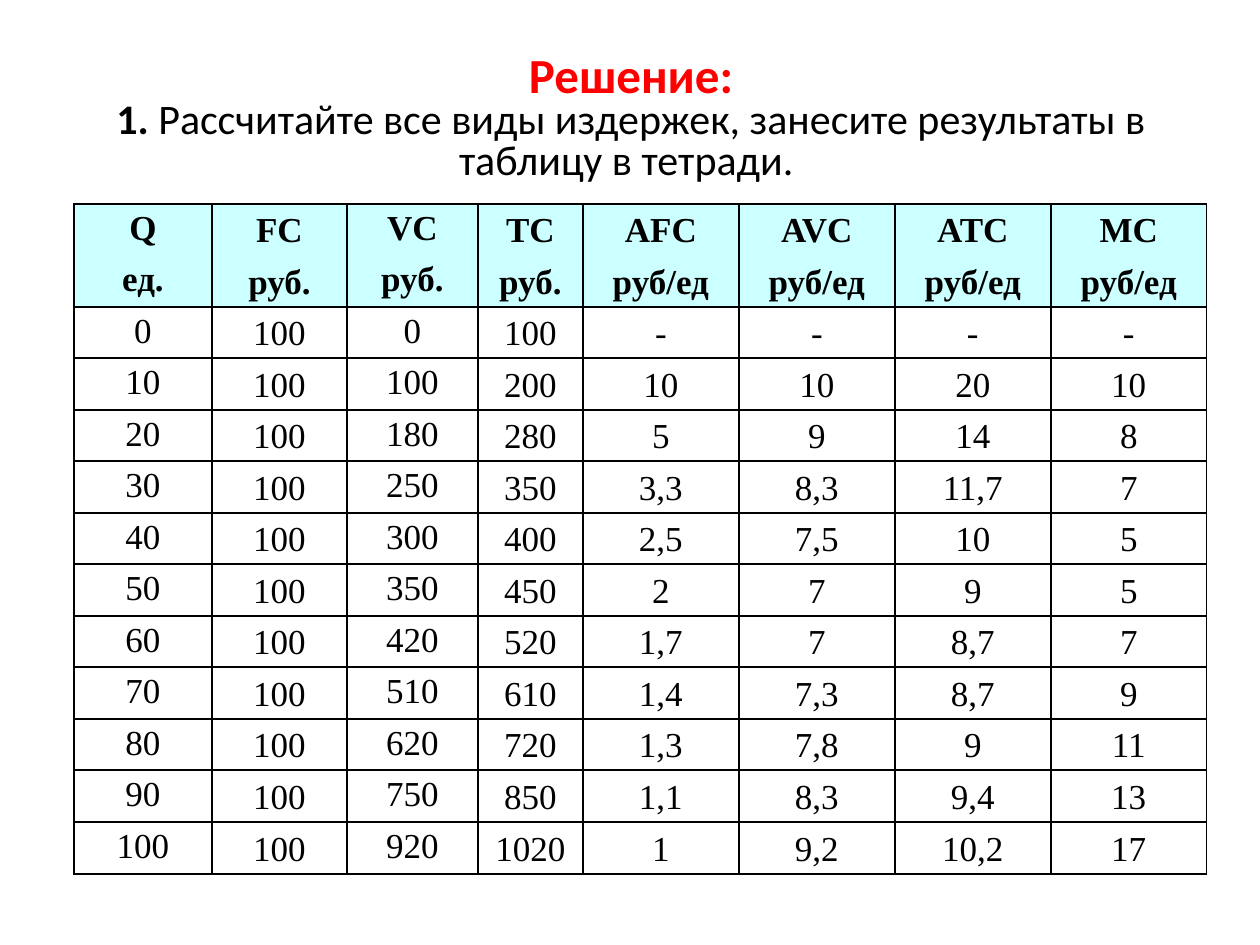
from lxml.etree import SubElement
from pptx import Presentation
from pptx.dml.color import RGBColor
from pptx.enum.text import MSO_ANCHOR, MSO_AUTO_SIZE, PP_ALIGN
from pptx.oxml.ns import qn
from pptx.util import Emu, Pt

PX = 914400 // 126
BLACK = RGBColor(0x00, 0x00, 0x00)
RED = RGBColor(0xFF, 0x00, 0x00)
WHITE = RGBColor(0xFF, 0xFF, 0xFF)
PALE_CYAN = RGBColor(0xCC, 0xFF, 0xFF)
CENTER = PP_ALIGN.CENTER
TOP, MIDDLE, BOTTOM = MSO_ANCHOR.TOP, MSO_ANCHOR.MIDDLE, MSO_ANCHOR.BOTTOM
NO_AUTOFIT = MSO_AUTO_SIZE.NONE

TITLE_BOX = (64, 45, 1134, 149)
TABLE_BOX = (74, 204, 1133, 670)
COLUMN_WIDTHS = [138, 135, 131, 105] + [156] * 4
TOP_ANCHORED_COLUMNS = (0, 2)
HEADER_ROWS = 2
COSTS = [
    ["Q", "FC", "VC", "TC", "AFC", "AVC", "ATC", "MC"],
    ["ед."] + ["руб."] * 3 + ["руб/ед"] * 4,
    ["0", "100", "0", "100", "-", "-", "-", "-"],
    ["10", "100", "100", "200", "10", "10", "20", "10"],
    ["20", "100", "180", "280", "5", "9", "14", "8"],
    ["30", "100", "250", "350", "3,3", "8,3", "11,7", "7"],
    ["40", "100", "300", "400", "2,5", "7,5", "10", "5"],
    ["50", "100", "350", "450", "2", "7", "9", "5"],
    ["60", "100", "420", "520", "1,7", "7", "8,7", "7"],
    ["70", "100", "510", "610", "1,4", "7,3", "8,7", "9"],
    ["80", "100", "620", "720", "1,3", "7,8", "9", "11"],
    ["90", "100", "750", "850", "1,1", "8,3", "9,4", "13"],
    ["100", "100", "920", "1020", "1", "9,2", "10,2", "17"],
]


def px(length):
    """Turn a length in px into EMU."""
    return Emu(length * PX)


def add_span(para, text, font, size, color, bold):
    """Add one formatted run to a paragraph."""
    span = para.add_run()
    span.text = text
    span.font.name = font
    span.font.size = Pt(size)
    span.font.color.rgb = color
    span.font.bold = bold


def fill_title(page, box):
    """Place the title placeholder in the box and write the task."""
    title = page.shapes.title
    title.left, title.top, title.width, title.height = map(px, box)
    frame = title.text_frame
    frame.word_wrap = True
    frame.auto_size = NO_AUTOFIT
    frame.vertical_anchor = MIDDLE
    para = frame.paragraphs[0]
    para.alignment = CENTER
    para.line_spacing = 0.8
    add_span(para, "Решение:", "Calibri", 28, RED, True)
    para.add_line_break()
    line_break = para._p.find(qn("a:br"))
    SubElement(line_break, qn("a:rPr"), sz="2800")
    add_span(para, "1. ", "Calibri", 24, BLACK, True)
    task = "Рассчитайте все виды издержек, занесите результаты в таблицу в тетради. "
    add_span(para, task, "Calibri", 24, BLACK, False)


def set_borders(cell, sides):
    """Draw black lines on the given sides of a cell and none on the others."""
    properties = cell._tc.get_or_add_tcPr()
    for index, side in enumerate("LRTB"):
        line = properties.makeelement(qn(f"a:ln{side}"), {"w": str(Pt(1))})
        properties.insert(index, line)
        if side in sides:
            fill = SubElement(line, qn("a:solidFill"))
            SubElement(fill, qn("a:srgbClr"), val=str(BLACK))
        else:
            SubElement(line, qn("a:noFill"))


def fill_cell(cell, text, row, column):
    """Write and format one cell of the cost table."""
    is_header = row < HEADER_ROWS
    cell.fill.solid()
    cell.fill.fore_color.rgb = PALE_CYAN if is_header else WHITE
    cell.margin_top = cell.margin_bottom = px(5)
    cell.vertical_anchor = TOP if column in TOP_ANCHORED_COLUMNS else BOTTOM
    para = cell.text_frame.paragraphs[0]
    para.alignment = CENTER
    add_span(para, text, "Times New Roman", 20, BLACK, is_header)
    set_borders(cell, {0: "LRT", 1: "LRB"}.get(row, "LRTB"))


def add_cost_table(page, box):
    """Add the cost table with rows sharing the height of the box."""
    height = box[3]
    count = len(COSTS)
    frame = page.shapes.add_table(count, len(COLUMN_WIDTHS), *map(px, box))
    table = frame.table
    for column, width in zip(table.columns, COLUMN_WIDTHS):
        column.width = px(width)
    for row, texts in enumerate(COSTS):
        row_top, row_bottom = height * row // count, height * (row + 1) // count
        table.rows[row].height = px(row_bottom - row_top)
        for column, text in enumerate(texts):
            fill_cell(table.cell(row, column), text, row, column)


def main():
    """Build the slide and save the deck."""
    deck = Presentation()
    deck.slide_width, deck.slide_height = px(1260), px(945)
    page = deck.slides.add_slide(deck.slide_layouts[5])
    fill_title(page, TITLE_BOX)
    add_cost_table(page, TABLE_BOX)
    deck.save("out.pptx")


if __name__ == "__main__":
    main()
